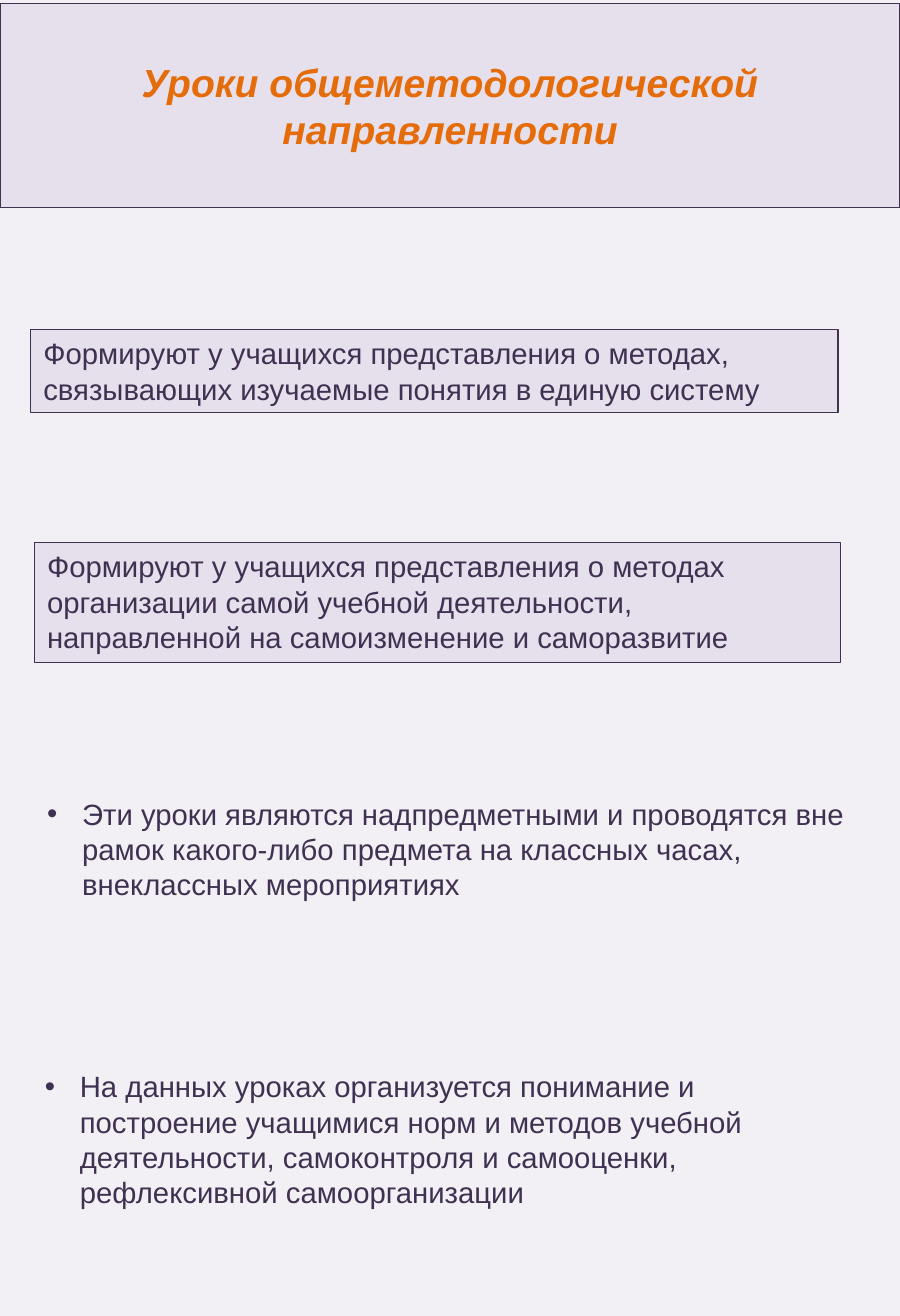
from pptx import Presentation
from pptx.dml.color import RGBColor
from pptx.enum.shapes import MSO_SHAPE
from pptx.enum.text import MSO_ANCHOR, MSO_AUTO_SIZE, PP_ALIGN
from pptx.util import Cm, Pt

WIDTH, HEIGHT = 19.5, 28.5
PAGE, PANEL, INK, ORANGE = "F2F0F5", "E6E0EC", "403152", "E46C0A"

# Places are left, top, width, height in cm
TITLE = "Уроки общеметодологической направленности"
TITLE_AT = (0, 0.08, WIDTH, 4.42)
BOXES = [
    ("Формируют у учащихся представления о методах, связывающих изучаемые "
     "понятия в единую систему", (0.66, 7.14, 17.5, 1.8)),
    ("Формируют у учащихся представления о методах организации самой учебной "
     "деятельности, направленной на самоизменение и саморазвитие",
     (0.74, 11.75, 17.47, 2.6)),
]
BULLETS = [
    ("Эти уроки являются надпредметными и проводятся вне рамок какого-либо "
     "предмета на классных часах, внеклассных мероприятиях",
     (0.74, 17.11, WIDTH, 2.6)),
    ("На данных уроках организуется понимание и построение учащимися норм и "
     "методов учебной деятельности, самоконтроля и самооценки, рефлексивной "
     "самоорганизации", (0.69, 23.01, 17.47, 3.35)),
]


def paint(fill, color):
    fill.solid()
    fill.fore_color.rgb = RGBColor.from_string(color)


def place(shape, spot):
    shape.left, shape.top, shape.width, shape.height = map(Cm, spot)


def panel(shape):
    """Give a shape the lilac fill and thin dark border."""
    paint(shape.fill, PANEL)
    paint(shape.line.fill, INK)
    shape.line.width = Pt(0.75)


def write(shape, text, size=18, color=INK, align=PP_ALIGN.LEFT,
          anchor=MSO_ANCHOR.TOP):
    frame = shape.text_frame
    frame.text = text
    frame.word_wrap = True
    frame.auto_size = MSO_AUTO_SIZE.NONE
    frame.vertical_anchor = anchor
    frame.margin_left = frame.margin_right = Cm(0.28)
    frame.margin_top = frame.margin_bottom = Cm(0.13)
    para = frame.paragraphs[0]
    para.alignment = align
    para.space_before = Pt(0)
    font = para.runs[0].font
    font.name, font.size = "Arial", Pt(size)
    paint(font.fill, color)
    return para


def main():
    deck = Presentation()
    deck.slide_width, deck.slide_height = Cm(WIDTH), Cm(HEIGHT)
    slide = deck.slides.add_slide(deck.slide_layouts.get_by_name("Two Content"))
    paint(slide.background.fill, PAGE)
    title, *lists = slide.placeholders

    place(title, TITLE_AT)
    panel(title)
    font = write(title, TITLE, 24, ORANGE, PP_ALIGN.CENTER,
                 MSO_ANCHOR.MIDDLE).runs[0].font
    font.bold = font.italic = True

    for text, spot in BOXES:
        box = slide.shapes.add_shape(MSO_SHAPE.RECTANGLE, *map(Cm, spot))
        box.shadow.inherit = False
        panel(box)
        write(box, text)

    for holder, (text, spot) in zip(lists, BULLETS):
        place(holder, spot)
        props = write(holder, text)._p.get_or_add_pPr()
        props.set("marL", str(Cm(0.76)))
        props.set("indent", str(-Cm(0.76)))

    deck.save("out.pptx")


if __name__ == "__main__":
    main()
